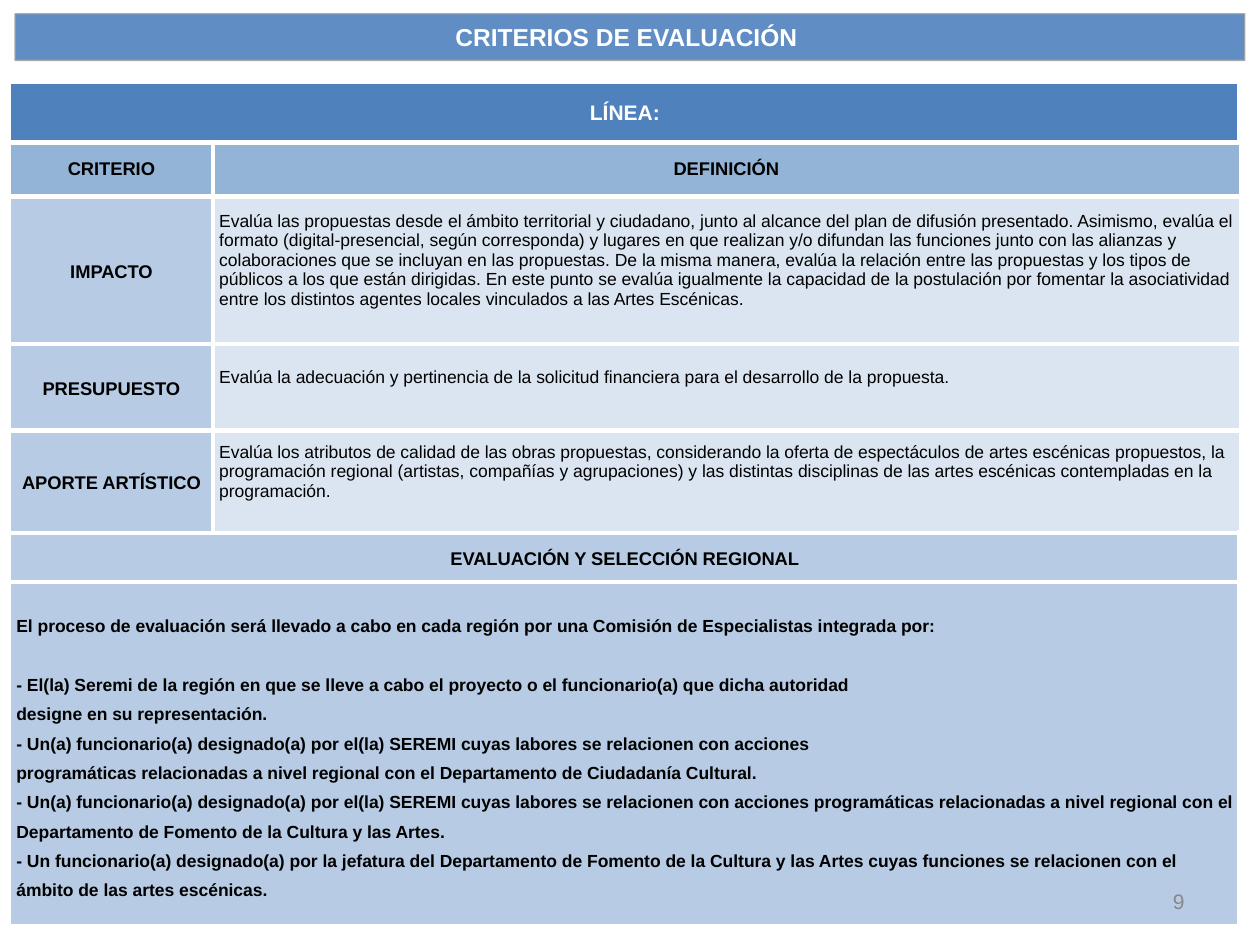
from lxml import etree
from pptx import Presentation
from pptx.dml.color import RGBColor
from pptx.enum.shapes import MSO_SHAPE
from pptx.enum.text import MSO_ANCHOR, PP_ALIGN
from pptx.oxml.ns import qn
from pptx.util import Inches, Pt

RECTANGLE = MSO_SHAPE.RECTANGLE
MIDDLE = MSO_ANCHOR.MIDDLE
LEFT, CENTER, RIGHT = PP_ALIGN.LEFT, PP_ALIGN.CENTER, PP_ALIGN.RIGHT

WHITE = RGBColor(0xFF, 0xFF, 0xFF)
BLACK = RGBColor(0x00, 0x00, 0x00)
BLUE = RGBColor(0x4F, 0x81, 0xBD)
HEADER_BLUE = RGBColor(0x93, 0xB3, 0xD7)
LABEL_BLUE = RGBColor(0xB7, 0xCC, 0xE4)
PALE_BLUE = RGBColor(0xDA, 0xE5, 0xF1)
BORDER_GRAY = RGBColor(0xA5, 0xA5, 0xA5)
NUMBER_GRAY = RGBColor(0x88, 0x88, 0x88)

FONT = "Arial"
OPACITY = 90
CELL_MARGIN = 0.05
OUTER_BORDER, INNER_BORDER = 1, 3
COLUMN_WIDTHS = [1.61, 8.15]
ROW_HEIGHTS = [0.47, 0.43, 1.17, 0.69, 0.81, 0.39, 2.73]

# Cell formats; "low" is the extra room under the text, in inches
LINE = {"fill": BLUE, "size": 12, "color": WHITE}
HEADER = {"fill": HEADER_BLUE}
LABEL = {"fill": LABEL_BLUE, "spacing": 1.15}
DEFINITION = {"fill": PALE_BLUE, "size": 10, "bold": False, "align": LEFT, "low": 0.16}
PROCESS = {"fill": LABEL_BLUE, "size": 10, "align": LEFT, "spacing": 1.5, "gap": 16.7}

CRITERIA = [
    ("IMPACTO",
     "Evalúa las propuestas desde el ámbito territorial y ciudadano, junto al alcance del "
     "plan de difusión presentado. Asimismo, evalúa el formato (digital-presencial, según "
     "corresponda) y lugares en que realizan y/o difundan las funciones junto con las "
     "alianzas y colaboraciones que se incluyan en las propuestas. De la misma manera, "
     "evalúa la relación entre las propuestas y los tipos de públicos a los que están "
     "dirigidas. En este punto se evalúa igualmente la capacidad de la postulación por "
     "fomentar la asociatividad entre los distintos agentes locales vinculados a las Artes "
     "Escénicas."),
    ("PRESUPUESTO",
     "Evalúa la adecuación y pertinencia de la solicitud financiera para el desarrollo de "
     "la propuesta."),
    ("APORTE ARTÍSTICO",
     "Evalúa los atributos de calidad de las obras propuestas, considerando la oferta de "
     "espectáculos de artes escénicas propuestos, la programación regional (artistas, "
     "compañías y agrupaciones) y las distintas disciplinas de las artes escénicas "
     "contempladas en la programación."),
]
COMMISSION = [
    "El proceso de evaluación será llevado a cabo en cada región por una Comisión de "
    "Especialistas integrada por:",
    "- El(la) Seremi de la región en que se lleve a cabo el proyecto o el funcionario(a) "
    "que dicha autoridad",
    "designe en su representación.",
    "- Un(a) funcionario(a) designado(a) por el(la) SEREMI cuyas labores se relacionen con "
    "acciones",
    "programáticas relacionadas a nivel regional con el Departamento de Ciudadanía Cultural.",
    "- Un(a) funcionario(a) designado(a) por el(la) SEREMI cuyas labores se relacionen con "
    "acciones programáticas relacionadas a nivel regional con el Departamento de Fomento de "
    "la Cultura y las Artes.",
    "- Un funcionario(a) designado(a) por la jefatura del Departamento de Fomento de la "
    "Cultura y las Artes cuyas funciones se relacionen con el ámbito de las artes escénicas.",
]


def write_text(text_frame, lines, size=10.5, color=BLACK, bold=True, align=CENTER,
               spacing=1.0, gap=0):
    """Write one paragraph per line, with a gap after the first one."""
    font_format = {"name": FONT, "size": Pt(size), "bold": bold}
    for index, line in enumerate(lines):
        paragraph = text_frame.add_paragraph() if index else text_frame.paragraphs[0]
        paragraph.alignment = align
        paragraph.line_spacing = spacing
        if gap and index == 0:
            paragraph.space_after = Pt(gap)
        run = paragraph.add_run()
        run.text = line
        for name, value in font_format.items():
            setattr(run.font, name, value)
        run.font.color.rgb = color


def set_opacity(element, percent):
    for color in element.iter(qn("a:srgbClr")):
        etree.SubElement(color, qn("a:alpha")).set("val", str(percent * 1000))


def add_title(slide, box):
    shape = slide.shapes.add_shape(RECTANGLE, *map(Inches, box))
    shape.shadow.inherit = False
    shape.fill.solid()
    shape.fill.fore_color.rgb = BLUE
    shape.line.color.rgb = BORDER_GRAY
    shape.line.width = Pt(0.75)
    set_opacity(shape.fill._xPr, OPACITY)
    shape.text_frame.vertical_anchor = MIDDLE
    write_text(shape.text_frame, ["CRITERIOS DE EVALUACIÓN "], size=14, color=WHITE)


def set_borders(cell, widths):
    properties = cell._tc.get_or_add_tcPr()
    for side, width in widths.items():
        border = etree.SubElement(properties, qn("a:ln" + side), w=str(Pt(width)))
        fill = etree.SubElement(border, qn("a:solidFill"))
        etree.SubElement(fill, qn("a:srgbClr"), val=str(WHITE))


def fill_cell(cell, lines, fill, low=0, **text_format):
    margins = {"margin_" + side: Inches(CELL_MARGIN) for side in ("left", "top", "right")}
    margins["margin_bottom"] = Inches(CELL_MARGIN + low)
    for name, value in margins.items():
        setattr(cell, name, value)
    cell.vertical_anchor = MIDDLE
    cell.fill.solid()
    cell.fill.fore_color.rgb = fill
    write_text(cell.text_frame, lines, **text_format)


def add_criteria_table(slide, left, top):
    # A row holds one (lines, format) pair per cell; a single pair spans the row
    rows = [
        [(["LÍNEA:"], LINE)],
        [(["CRITERIO"], HEADER), (["DEFINICIÓN"], HEADER)],
        *[[([name], LABEL), ([text], DEFINITION)] for name, text in CRITERIA],
        [(["EVALUACIÓN Y SELECCIÓN REGIONAL"], LABEL)],
        [(COMMISSION, PROCESS)],
    ]
    size = sum(COLUMN_WIDTHS), sum(ROW_HEIGHTS)
    table = slide.shapes.add_table(len(rows), len(COLUMN_WIDTHS),
                                   *map(Inches, (left, top, *size))).table
    table.first_row = table.horz_banding = False
    for column, width in zip(table.columns, COLUMN_WIDTHS):
        column.width = Inches(width)
    for row, height in zip(table.rows, ROW_HEIGHTS):
        row.height = Inches(height)

    for row_index, row in enumerate(rows):
        # Thin outer edges, thick lines between cells
        for column_index in range(len(COLUMN_WIDTHS)):
            set_borders(table.cell(row_index, column_index), {
                "L": INNER_BORDER if column_index else OUTER_BORDER,
                "R": OUTER_BORDER if column_index else INNER_BORDER,
                "T": INNER_BORDER if row_index else OUTER_BORDER,
                "B": INNER_BORDER,
            })
        if len(row) == 1:
            table.cell(row_index, 0).merge(table.cell(row_index, len(COLUMN_WIDTHS) - 1))
        for column_index, (lines, cell_format) in enumerate(row):
            fill_cell(table.cell(row_index, column_index), lines, **cell_format)


def add_slide_number(slide, box, number):
    text_frame = slide.shapes.add_textbox(*map(Inches, box)).text_frame
    text_frame.word_wrap = True
    text_frame.vertical_anchor = MIDDLE
    write_text(text_frame, [number], size=12, color=NUMBER_GRAY, bold=False, align=RIGHT)


def main():
    presentation = Presentation()
    presentation.slide_width, presentation.slide_height = Inches(10), Inches(7.5)
    slide = presentation.slides.add_slide(presentation.slide_layouts[6])
    add_title(slide, (0.12, 0.11, 9.76, 0.37))
    add_criteria_table(slide, 0.08, 0.66)
    add_slide_number(slide, (7.17, 6.95, 2.33, 0.4), "9")
    presentation.save("out.pptx")


if __name__ == "__main__":
    main()
